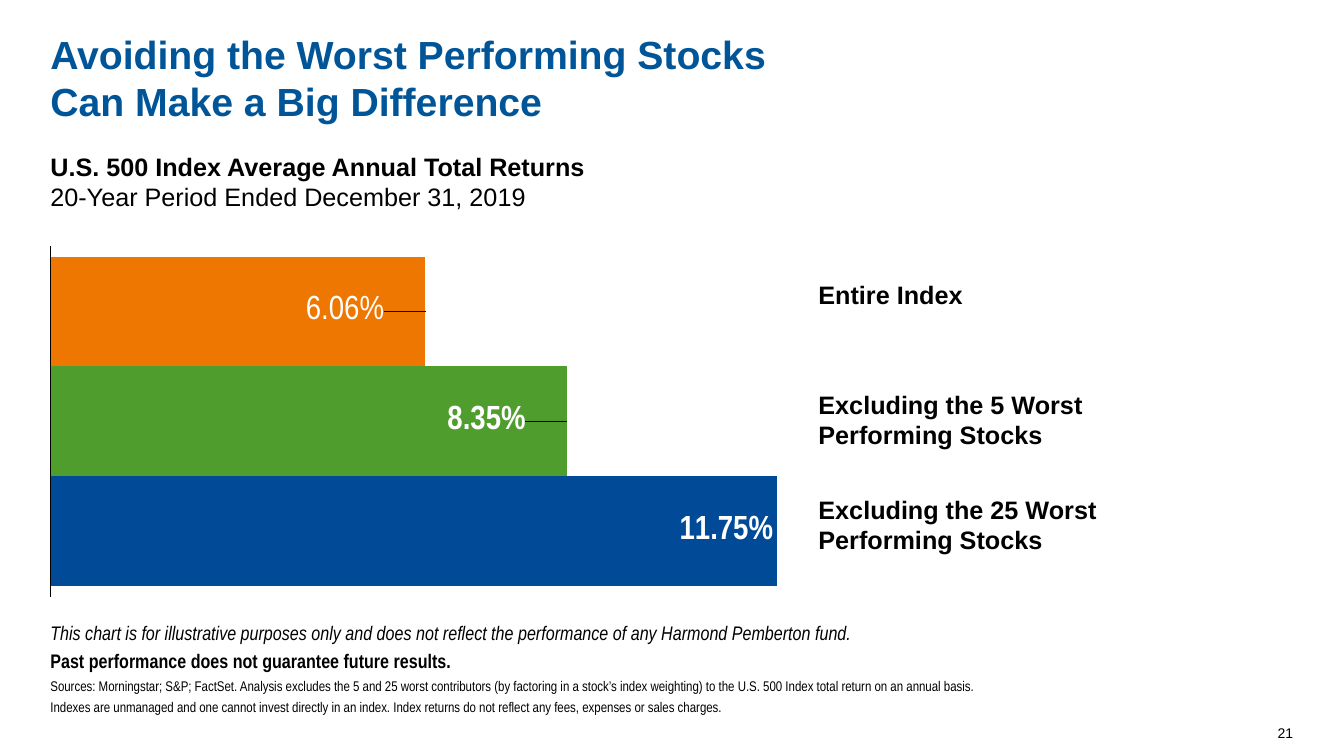
from lxml.etree import SubElement
from pptx import Presentation
from pptx.chart.data import CategoryChartData
from pptx.dml.color import RGBColor
from pptx.enum.chart import XL_CHART_TYPE, XL_LABEL_POSITION, XL_TICK_LABEL_POSITION, XL_TICK_MARK
from pptx.enum.text import MSO_ANCHOR, PP_ALIGN
from pptx.oxml import parse_xml
from pptx.oxml.ns import nsdecls, qn
from pptx.util import Pt

SANS, SLIM = "Arial", "Arial Narrow"
BLACK, WHITE, BLUE = "000000", "FFFFFF", "005598"
TOP, END = MSO_ANCHOR.TOP, MSO_ANCHOR.BOTTOM
LEFT, RIGHT = PP_ALIGN.LEFT, PP_ALIGN.RIGHT

TEXTS = [
    ((36, 21.6, 684, 72), TOP, LEFT, 0, SANS, 28, BLUE, [
        ("Avoiding the Worst Performing Stocks", "b"),
        ("Can Make a Big Difference", "b")]),
    ((36, 108, 684, 43.2), TOP, LEFT, 0, SANS, 18, BLACK, [
        ("U.S. 500 Index Average Annual Total Returns", "b"),
        ("20-Year Period Ended December 31, 2019", "")]),
    ((584.64, 199.44, 210, 21.6), TOP, LEFT, 0, SANS, 18, BLACK, [
        ("Entire Index", "b")]),
    ((584.64, 277.92, 210, 43.92), TOP, LEFT, 0, SANS, 18, BLACK, [
        ("Excluding the 5 Worst", "b"), ("Performing Stocks", "b")]),
    ((584.64, 352.8, 210, 43.92), TOP, LEFT, 0, SANS, 18, BLACK, [
        ("Excluding the 25 Worst", "b"), ("Performing Stocks", "b")]),
    ((36, 443.52, 700, 36.72), END, LEFT, 3, SLIM, 14, BLACK, [
        ("This chart is for illustrative purposes only and does not reflect "
         "the performance of any Harmond Pemberton fund.", "i"),
        ("Past performance does not guarantee future results.", "b")]),
    ((36, 483.84, 888, 27.36), END, LEFT, 3, SLIM, 10, BLACK, [
        ("Sources: Morningstar; S&P; FactSet. Analysis excludes the 5 and 25 worst "
         "contributors (by factoring in a stock’s index weighting) to the "
         "U.S. 500 Index total return on an annual basis.", ""),
        ("Indexes are unmanaged and one cannot invest directly in an index. "
         "Index returns do not reflect any fees, expenses or sales charges.", "")]),
    ((894.96, 514.8, 28.8, 14.4), END, RIGHT, 0, SANS, 10, BLACK, [("21", "")]),
]
BARS = [
    ("Entire Index", 0.0606, "ED7700", False, -0.03),
    ("Excluding 5 Worst", 0.0835, "4E9D2D", True, -0.03),
    ("Excluding 25 Worst", 0.1175, "004A98", True, 0),
]
BOX = (31.68, 174.96, 887.76, 252)
FORMAT = "0.00%"


def tint(code):
    return RGBColor.from_string(code)


def style(font, face, size, code, bold=False, slant=False):
    font.name, font.size, font.bold, font.italic = face, Pt(size), bold, slant
    font.color.rgb = tint(code)


def write(slide, box, anchor, align, after, face, size, code, lines):
    frame = slide.shapes.add_textbox(*map(Pt, box)).text_frame
    frame.word_wrap = True
    frame.vertical_anchor = anchor
    frame.margin_left = frame.margin_right = frame.margin_top = frame.margin_bottom = 0
    for i, (text, look) in enumerate(lines):
        para = frame.add_paragraph() if i else frame.paragraphs[0]
        para.text = text
        para.alignment = align
        para.space_after = Pt(after)
        style(para.font, face, size, code, look == "b", look == "i")


def layout(**parts):
    node = parse_xml(f"<c:layout {nsdecls('c')}/>")
    inner = SubElement(node, qn("c:manualLayout"))
    for key, val in parts.items():
        SubElement(inner, qn("c:" + key)).set("val", str(val))
    return node


def mark(series, bold, shift):
    labels = series.data_labels
    labels.show_value = True
    labels.number_format = FORMAT
    labels.number_format_is_linked = False
    labels.position = XL_LABEL_POSITION.INSIDE_END
    style(labels.font, SLIM, 24, WHITE, bold)
    if shift:
        label = series.points[0].data_label
        style(label.font, SLIM, 24, WHITE, bold)
        label.position = XL_LABEL_POSITION.INSIDE_END
        node = labels._element.find(qn("c:dLbl"))
        node.insert(1, layout(x=shift, y=0))
        node.insert(2, parse_xml(
            f'<c:numFmt {nsdecls("c")} formatCode="{FORMAT}" sourceLinked="0"/>'))


def plot(slide):
    data = CategoryChartData(number_format=FORMAT)
    data.categories = ["1"]
    for name, val, *_ in BARS:
        data.add_series(name, [val])
    chart = slide.shapes.add_chart(
        XL_CHART_TYPE.BAR_CLUSTERED, *map(Pt, BOX), data).chart
    chart.has_legend = chart.has_title = False
    style(chart.font, SLIM, 10, BLACK)
    area = chart._chartSpace.chart.plotArea
    for old in area.findall(qn("c:layout")):
        area.remove(old)
    area.insert(0, layout(layoutTarget="inner", xMode="edge", yMode="edge",
                          x=0.005, y=0, w=0.995, h=1))
    cat, scale = chart.category_axis, chart.value_axis
    cat.reverse_order = True
    cat.tick_label_position = XL_TICK_LABEL_POSITION.NONE
    cat.major_tick_mark = cat.minor_tick_mark = XL_TICK_MARK.NONE
    cat.format.line.color.rgb = tint(BLACK)
    cat.format.line.width = Pt(1)
    scale.minimum_scale, scale.maximum_scale = 0, 0.2
    scale.has_major_gridlines = scale.visible = False
    bars = chart.plots[0]
    bars.gap_width, bars.overlap, bars.vary_by_categories = 20, 0, False
    for series, (_, _, code, bold, shift) in zip(bars.series, BARS):
        series.format.fill.solid()
        series.format.fill.fore_color.rgb = tint(code)
        mark(series, bold, shift)


def main():
    deck = Presentation()
    deck.slide_width, deck.slide_height = Pt(960), Pt(540)
    slide = deck.slides.add_slide(deck.slide_layouts[6])
    plot(slide)
    for item in TEXTS:
        write(slide, *item)
    deck.save("out.pptx")


if __name__ == "__main__":
    main()
